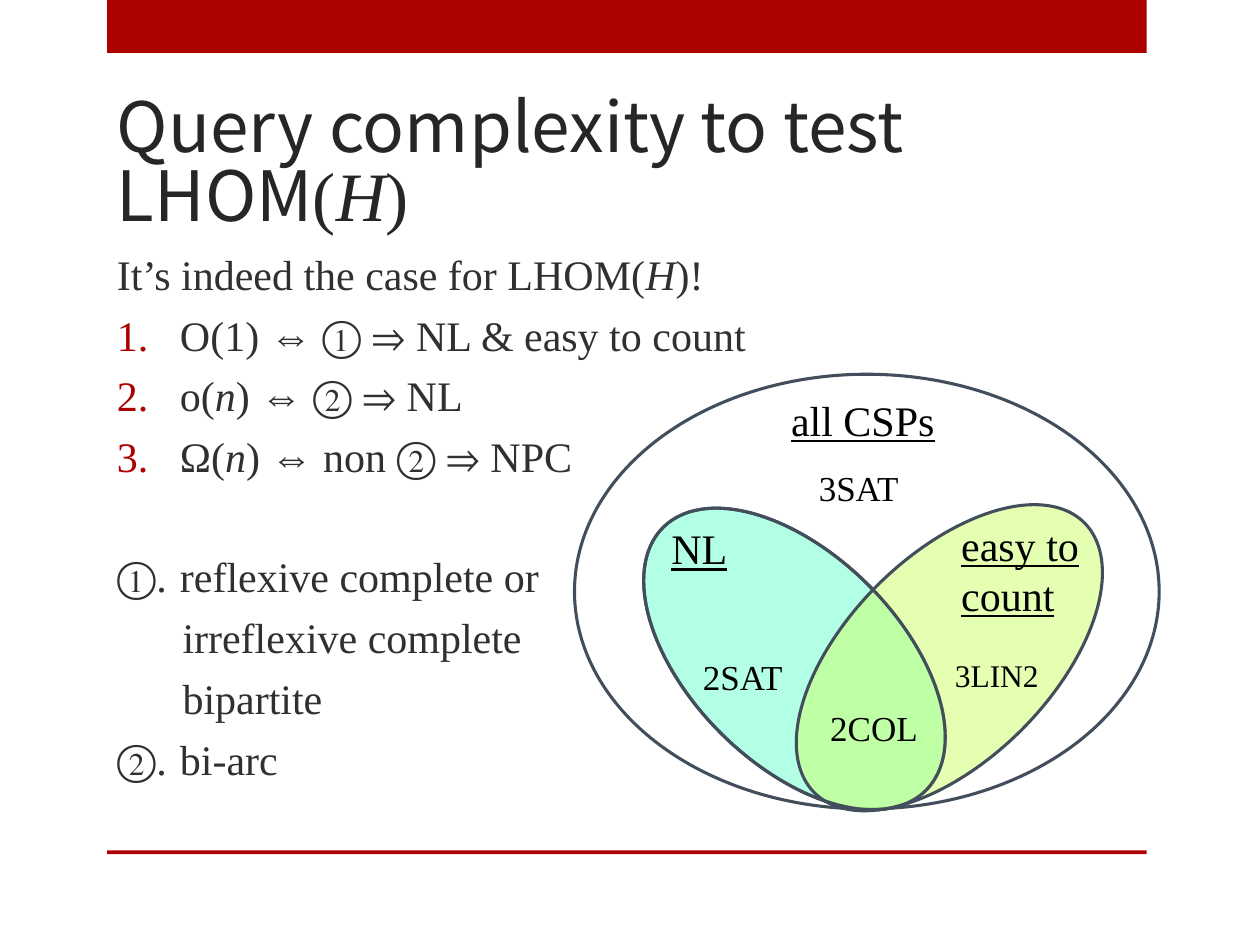
from pptx import Presentation
from pptx.dml.color import RGBColor
from pptx.enum.shapes import MSO_SHAPE
from pptx.enum.text import MSO_ANCHOR
from pptx.oxml.ns import qn
from pptx.util import Inches, Pt
from lxml import etree

RECTANGLE, OVAL = MSO_SHAPE.RECTANGLE, MSO_SHAPE.OVAL
TOP, BOTTOM = MSO_ANCHOR.TOP, MSO_ANCHOR.BOTTOM
SERIF, SANS = "Times New Roman", "Noto Sans CJK JP"
RED, SLATE, BODY, BLACK = "AD0101", "424E5B", "303030", "000000"
WIDTH, HEIGHT = 10, 7.5
MARGIN, COLUMN = 0.083 * WIDTH, 0.825 * WIDTH
NL_OVAL = (4.83, 4.4, 2.95, 1.66)
COUNT_OVAL = (6.02, 4.41, 3.03, 1.62)


def color(value):
    """Turn a hex string into a colour."""
    return RGBColor.from_string(value)


def add_figure(page, kind, area, fill=None, alpha=None, line=None, rotation=0):
    """Draw a preset shape with an optional fill, transparency and outline."""
    shape = page.shapes.add_shape(kind, *map(Inches, area))
    shape.shadow.inherit = False
    shape.rotation = rotation
    if fill:
        shape.fill.solid()
        shape.fill.fore_color.rgb = color(fill)
    else:
        shape.fill.background()
    if alpha:
        tint = shape.fill._xPr.find(".//" + qn("a:srgbClr"))
        etree.SubElement(tint, qn("a:alpha"), val=str(alpha * 1000))
    if line:
        shape.line.color.rgb = color(line)
        shape.line.width = Pt(1.75)
    else:
        shape.line.fill.background()


def add_box(page, area, wrap=True, anchor=TOP):
    """Add an empty text box and return its text frame."""
    frame = page.shapes.add_textbox(*map(Inches, area)).text_frame
    frame.word_wrap = wrap
    frame.vertical_anchor = anchor
    return frame


def write(para, text, size=24, font=SERIF, ink=BODY, italic=False, underline=False):
    """Append one formatted span to a paragraph."""
    span = para.add_run()
    span.text = text
    span.font.size = Pt(size)
    span.font.name = font
    span.font.color.rgb = color(ink)
    span.font.italic = italic
    span.font.underline = underline


def write_math(para, text, **style):
    """Write text in which the parts between asterisks are italic."""
    for index, part in enumerate(text.split("*")):
        if part:
            write(para, part, italic=index % 2 == 1, **style)


def indent(para, left, hanging=0, numbering=None, ink=None):
    """Set a paragraph's indent and its automatic numbering."""
    properties = para._p.get_or_add_pPr()
    properties.set("marL", str(Inches(left)))
    properties.set("indent", str(-Inches(hanging)))
    if ink:
        bullet = etree.SubElement(properties, qn("a:buClr"))
        etree.SubElement(bullet, qn("a:srgbClr"), val=ink)
    if numbering:
        etree.SubElement(properties, qn("a:buAutoNum"), type=numbering)


def add_title(page):
    """Write the title above the body."""
    area = (MARGIN, 0.1 * HEIGHT, COLUMN, 1.17)
    para = add_box(page, area, anchor=BOTTOM).paragraphs[0]
    para.line_spacing = 0.83
    write(para, "Query complexity to test LHOM", size=39.6, font=SANS, ink="262626")
    write_math(para, "(*H*)", size=39.6, ink="262626")


def add_body(page):
    """Write the statement, the three results and the two definitions."""
    results = {"left": 0.5, "hanging": 0.5, "numbering": "arabicPeriod", "ink": RED}
    terms = {"left": 0.5, "hanging": 0.5, "numbering": "circleNumDbPlain"}
    more = {"left": 0.52}
    lines = [
        ("It’s indeed the case for LHOM(*H*)!", {"left": 0}, 6),
        ("O(1) ⇔ ① ⇒ NL & easy to count", results, 6),
        ("o(*n*) ⇔ ② ⇒ NL", results, 6),
        ("Ω(*n*) ⇔ non ② ⇒ NPC", results, 6),
        ("reflexive complete or", terms, 39.5),
        ("irreflexive complete", more, 6),
        ("bipartite", more, 6),
        ("bi-arc", terms, 6),
    ]
    frame = add_box(page, (MARGIN, 1.92, COLUMN, 4.83))
    for index, (text, layout, gap) in enumerate(lines):
        para = frame.add_paragraph() if index else frame.paragraphs[0]
        para.space_before = Pt(gap)
        para.level = 1 if layout is more else 0
        indent(para, **layout)
        write_math(para, text)


def add_label(page, area, lines, size=20, underline=False):
    """Write a label of one or more lines on the diagram."""
    frame = add_box(page, area, wrap=False)
    for index, text in enumerate(lines):
        para = frame.add_paragraph() if index else frame.paragraphs[0]
        write(para, text, size=size, ink=BLACK, underline=underline)


def add_diagram(page):
    """Draw the nested classes of problems and name them."""
    add_figure(page, OVAL, (4.56, 2.97, 4.64, 3.45), line=SLATE)
    add_figure(page, OVAL, NL_OVAL, "66FFCC", 50, SLATE, 45)
    add_figure(page, OVAL, COUNT_OVAL, "CCFF66", 50, SLATE, 315)
    add_label(page, (7.53, 4.07, 1.15, 0.91), ["easy to", "count"], 24, True)
    add_label(page, (5.23, 4.1, 0.66, 0.5), ["NL"], 24, True)
    add_label(page, (6.18, 3.08, 1.35, 0.5), ["all CSPs"], 24, True)
    add_label(page, (5.48, 5.15, 0.84, 0.44), ["2SAT"])
    add_label(page, (6.49, 5.56, 0.9, 0.44), ["2COL"])
    add_label(page, (6.4, 3.65, 0.84, 0.44), ["3SAT"])
    add_label(page, (7.48, 5.16, 0.87, 0.4), ["3LIN2"], 18)
    add_figure(page, OVAL, NL_OVAL, line=SLATE, rotation=45)


def main():
    """Build the slide and save it."""
    deck = Presentation()
    deck.slide_width, deck.slide_height = Inches(WIDTH), Inches(HEIGHT)
    page = deck.slides.add_slide(deck.slide_layouts[6])
    for top, height in ((0, 0.42), (0.9 * HEIGHT, 0.03)):
        add_figure(page, RECTANGLE, (0.085 * WIDTH, top, COLUMN, height), RED)
    add_title(page)
    add_body(page)
    add_diagram(page)
    deck.save("out.pptx")


if __name__ == "__main__":
    main()
